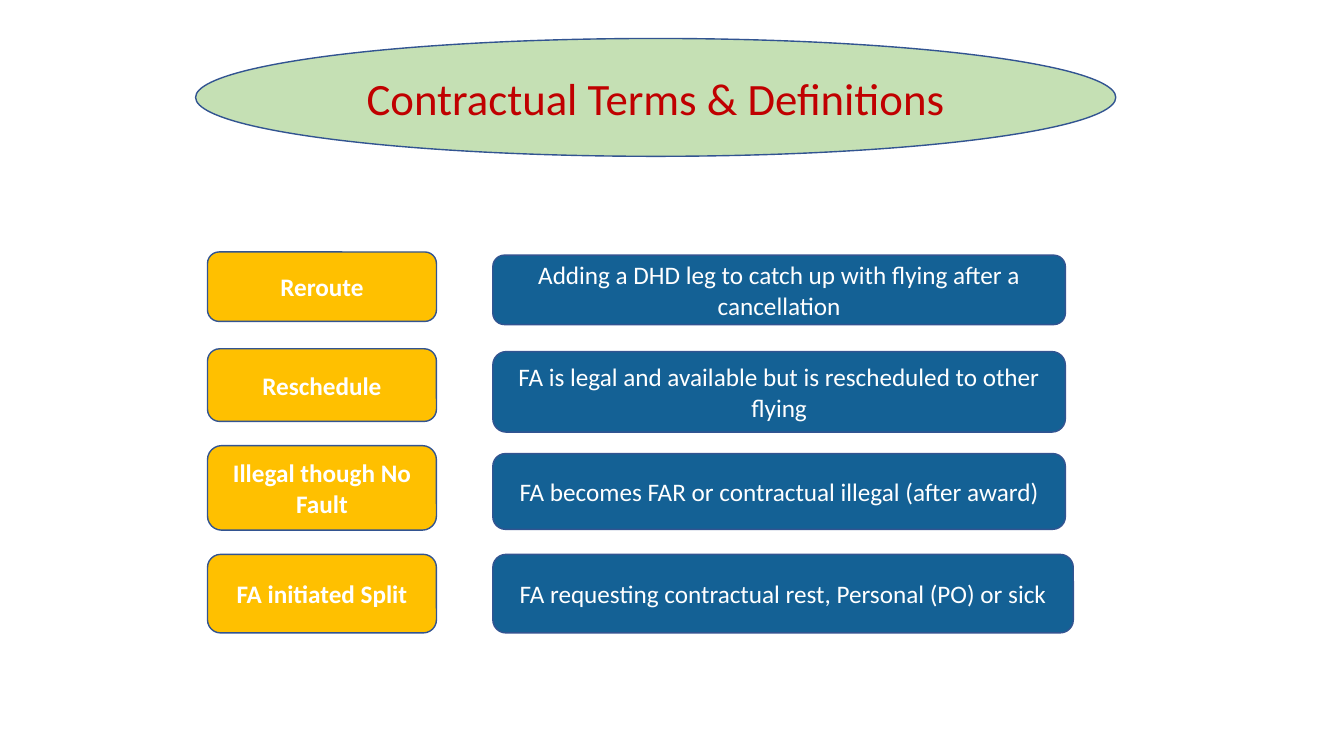
from dataclasses import dataclass

from pptx import Presentation
from pptx.dml.color import RGBColor
from pptx.enum.shapes import MSO_SHAPE as Preset
from pptx.enum.text import MSO_ANCHOR as Anchor, MSO_AUTO_SIZE as AutoSize, PP_ALIGN as Align
from pptx.util import Cm, Pt


@dataclass(frozen=True)
class Theme:
    font: str = "Calibri"
    title_size: int = 32
    body_size: int = 18
    title: str = "C00000"
    banner: str = "C5E0B4"
    term: str = "FFC000"
    definition: str = "146195"
    outline: str = "325491"
    on_dark: str = "FFFFFF"


class SlideBuilder:
    def __init__(self, slide, theme):
        self.slide = slide
        self.theme = theme

    def panel(self, preset, box, fill):
        """Add a filled, outlined shape; box is left, top, width, height in cm."""
        panel = self.slide.shapes.add_shape(preset, *map(Cm, box))
        panel.shadow.inherit = False
        panel.fill.solid()
        panel.fill.fore_color.rgb = RGBColor.from_string(fill)
        panel.line.color.rgb = RGBColor.from_string(self.theme.outline)
        panel.line.width = Pt(1)
        return panel

    def label(self, shape, text, size, color, bold=False):
        frame = shape.text_frame
        frame.text = text
        frame.word_wrap = True
        frame.auto_size = AutoSize.NONE
        frame.vertical_anchor = Anchor.MIDDLE
        paragraph = frame.paragraphs[0]
        paragraph.alignment = Align.CENTER
        font = paragraph.font
        font.name, font.size, font.bold = self.theme.font, Pt(size), bold
        font.color.rgb = RGBColor.from_string(color)

    def title(self, text, box):
        """Set the title on an elliptical banner."""
        self.panel(Preset.OVAL, box, self.theme.banner)
        heading = self.slide.shapes.title
        heading.left, heading.top, heading.width, heading.height = map(Cm, box)
        self.label(heading, text, self.theme.title_size, self.theme.title)
        # Bring the heading in front of its banner
        self.slide.shapes.element.append(heading.element)

    def card(self, text, box, fill, bold=False):
        card = self.panel(Preset.ROUNDED_RECTANGLE, box, fill)
        self.label(card, text, self.theme.body_size, self.theme.on_dark, bold)


TERM_LEFT, TERM_WIDTH = 5.23, 5.77
DEFINITION_LEFT = 12.42

# Term, its top and height; definition, its top, width and height (cm)
ENTRIES = [
    ("Reroute", 6.35, 1.75,
     "Adding a DHD leg to catch up with flying after a cancellation", 6.43, 14.43, 1.75),
    ("Reschedule", 8.79, 1.83,
     "FA is legal and available but is rescheduled to other flying", 8.86, 14.43, 2.03),
    ("Illegal though No Fault", 11.23, 2.13,
     "FA becomes FAR or contractual illegal (after award)", 11.43, 14.43, 1.91),
    ("FA initiated Split", 13.97, 1.98,
     "FA requesting contractual rest, Personal (PO) or sick", 13.97, 14.63, 1.98),
]


def main():
    deck = Presentation()
    deck.slide_width, deck.slide_height = Cm(33.87), Cm(19.05)
    theme = Theme()
    builder = SlideBuilder(deck.slides.add_slide(deck.slide_layouts[5]), theme)

    # Heading
    builder.title("Contractual Terms & Definitions", (4.93, 0.97, 23.19, 2.97))

    # Terms on the left, definitions on the right
    for term, term_top, term_height, definition, top, width, height in ENTRIES:
        builder.card(term, (TERM_LEFT, term_top, TERM_WIDTH, term_height), theme.term, bold=True)
        builder.card(definition, (DEFINITION_LEFT, top, width, height), theme.definition)

    deck.save("out.pptx")


if __name__ == "__main__":
    main()
